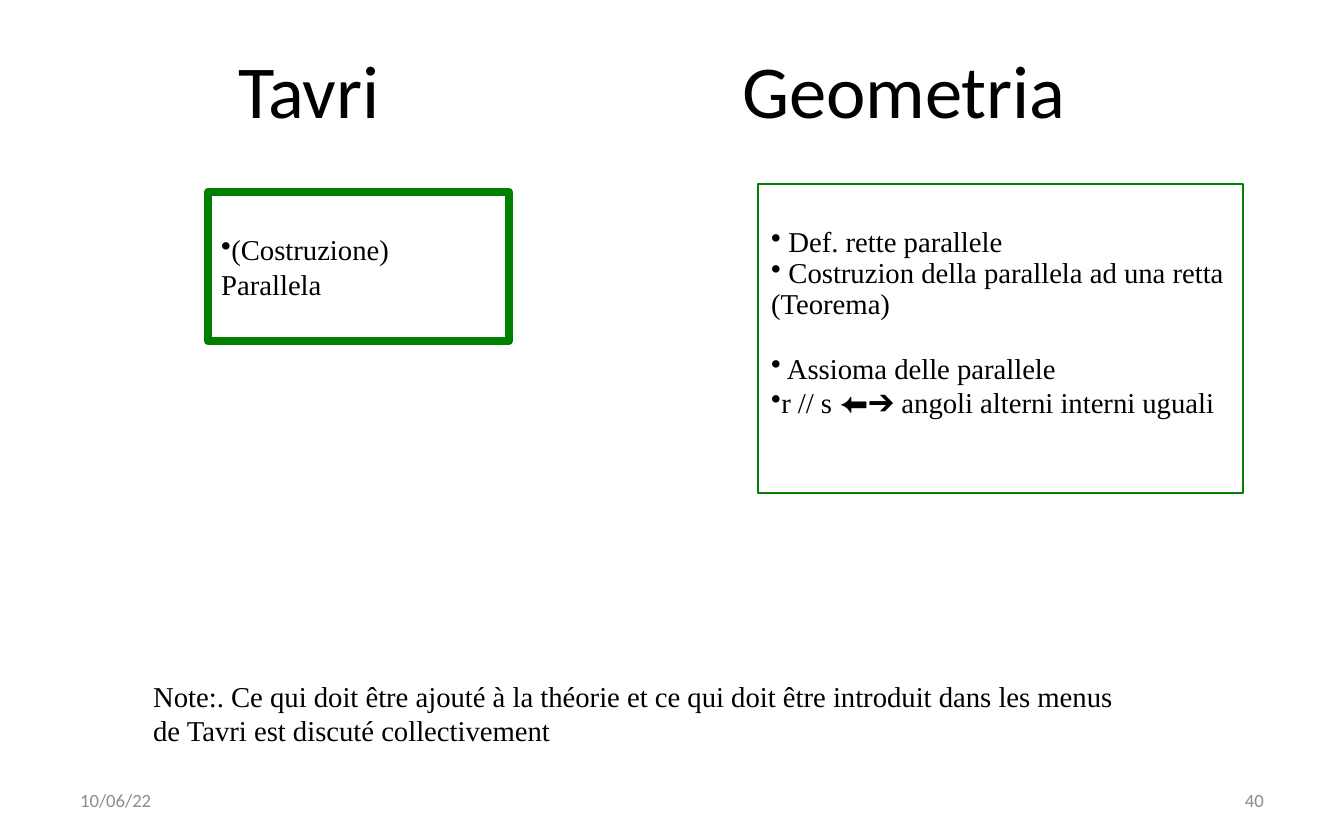
"""Build a slide comparing software menu commands with geometry theory."""
from lxml.etree import SubElement
from pptx import Presentation
from pptx.dml.color import RGBColor
from pptx.enum.shapes import MSO_SHAPE
from pptx.enum.text import MSO_ANCHOR, PP_ALIGN
from pptx.oxml.ns import qn
from pptx.util import Pt

PX = 914400 / 134.4
BLACK = RGBColor(0, 0, 0)
GREEN = RGBColor(0, 128, 0)
GREY = RGBColor(140, 140, 140)
BODY_SIZE = 15.4


def px(length):
    return round(length * PX)


def add_text(paragraph, text, font_name, size, color):
    run = paragraph.add_run()
    run.text = text
    run.font.name = font_name
    run.font.size = Pt(size)
    run.font.color.rgb = color


presentation = Presentation()
presentation.slide_width = px(1344)
presentation.slide_height = px(840)
slide = presentation.slides.add_slide(presentation.slide_layouts[5])

title = slide.shapes.title
title.left, title.top, title.width, title.height = px(187), px(19), px(951), px(140)
title_frame = title.text_frame
title_frame.margin_left = px(51)
title_frame.vertical_anchor = MSO_ANCHOR.MIDDLE
heading = title_frame.paragraphs[0]
heading.alignment = PP_ALIGN.LEFT
tab_list = SubElement(heading._p.get_or_add_pPr(), qn("a:tabLst"))
SubElement(tab_list, qn("a:tab"), pos=str(px(504)), algn="l")
add_text(heading, "Tavri\tGeometria", "Calibri", 40, BLACK)

theory_items = [
    (" Def. rette parallele", 1, 0),
    (" Costruzion della parallela ad una retta (Teorema)", 0.9, 0),
    (" Assioma delle parallele", 1, 16),
    ("r // s ⬅➔ angoli alterni interni uguali", 1, 0),
]
menu_items = [("(Costruzione) Parallela", 1, 0)]
boxes = [
    (758, 184, 485, 309, 0.75, theory_items),
    (208, 192, 301, 149, 4.5, menu_items),
]
for left, top, width, height, line_width, items in boxes:
    box = slide.shapes.add_shape(MSO_SHAPE.RECTANGLE, px(left), px(top), px(width), px(height))
    box.shadow.inherit = False
    box.fill.background()
    box.line.color.rgb = GREEN
    box.line.width = Pt(line_width)
    frame = box.text_frame
    frame.word_wrap = True
    frame.vertical_anchor = MSO_ANCHOR.TOP
    frame.margin_top = px(40)
    for index, (text, line_spacing, space_before) in enumerate(items):
        paragraph = frame.add_paragraph() if index else frame.paragraphs[0]
        paragraph.alignment = PP_ALIGN.LEFT
        paragraph.line_spacing = line_spacing
        paragraph.space_before = Pt(space_before)
        SubElement(paragraph._p.get_or_add_pPr(), qn("a:buChar"), char="•")
        add_text(paragraph, text, "Times New Roman", BODY_SIZE, BLACK)

note = (
    "Note:. Ce qui doit être ajouté à la théorie et ce qui doit être introduit "
    "dans les menus de Tavri est discuté collectivement"
)
captions = [
    (140, 672, 992, 82, note, "Times New Roman", BODY_SIZE, BLACK, PP_ALIGN.LEFT, MSO_ANCHOR.TOP),
    (67, 778, 313, 45, "10/06/22", "Calibri", 10, GREY, PP_ALIGN.LEFT, MSO_ANCHOR.MIDDLE),
    (964, 778, 313, 45, "40", "Calibri", 10, GREY, PP_ALIGN.RIGHT, MSO_ANCHOR.MIDDLE),
]
for left, top, width, height, text, font_name, size, color, alignment, anchor in captions:
    caption = slide.shapes.add_textbox(px(left), px(top), px(width), px(height))
    frame = caption.text_frame
    frame.word_wrap = True
    frame.vertical_anchor = anchor
    paragraph = frame.paragraphs[0]
    paragraph.alignment = alignment
    add_text(paragraph, text, font_name, size, color)

presentation.save("out.pptx")
